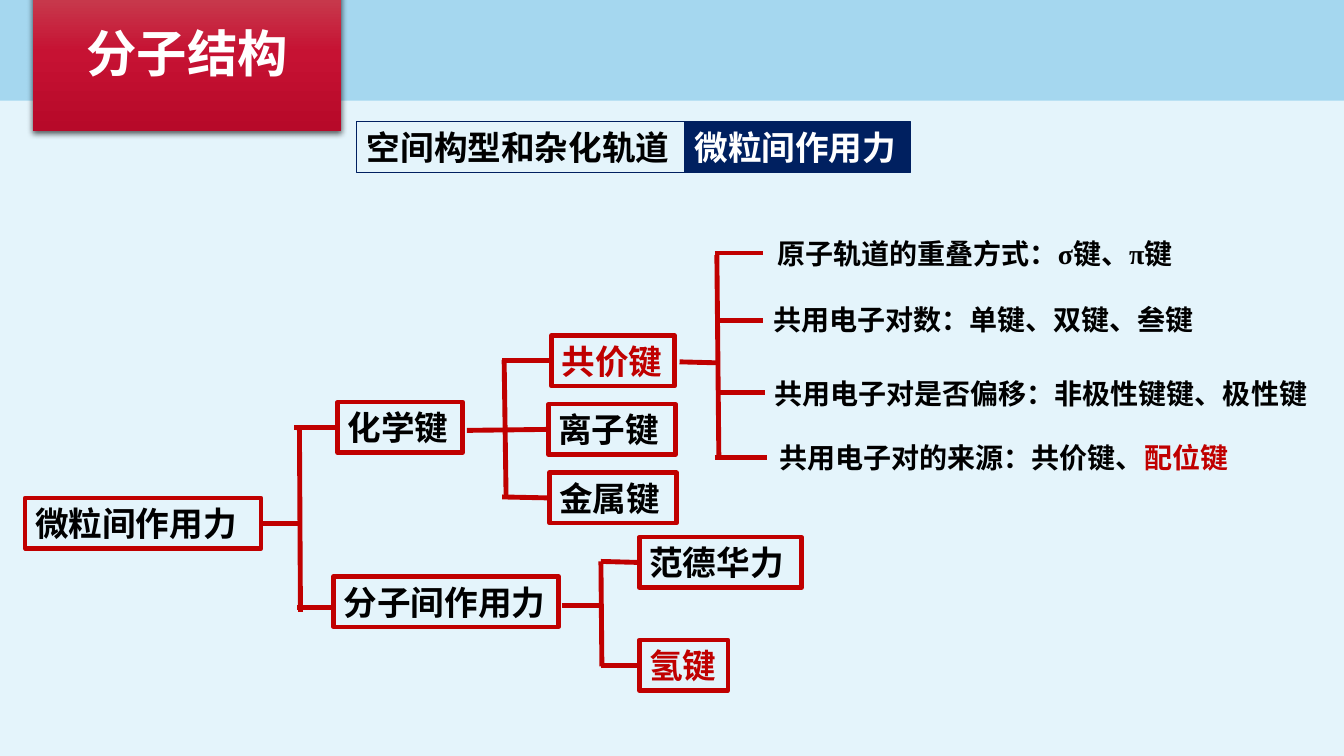
from dataclasses import dataclass

from lxml import etree
from pptx import Presentation
from pptx.dml.color import RGBColor
from pptx.enum import shapes, text
from pptx.util import Inches, Pt

DRAWING = "http://schemas.openxmlformats.org/drawingml/2006/main"
LEFT, RIGHT = 1, 3


@dataclass(frozen=True)
class Theme:
    background: str = "E4F4FB"
    band: str = "A5D7EF"
    navy: str = "002060"
    red: str = "C00000"
    black: str = "000000"
    white: str = "FFFFFF"
    title_stops: tuple = ((0, "C84D59"), (50, "C61233"), (100, "B70929"))
    heading_font: str = "Arial"
    note_font: str = "Times New Roman"
    title_size: int = 36
    box_size: int = 24
    note_size: int = 20
    tab_line: float = 0.75
    box_line: float = 3.25
    branch_line: float = 3.5


def color(value):
    return RGBColor.from_string(value)


def add_xml(parent, source):
    parent.append(etree.fromstring(source.replace(">", f' xmlns:a="{DRAWING}">', 1)))


class StructureSlide:
    def __init__(self, page, theme):
        self.page, self.theme = page, theme
        page.background.fill.solid()
        page.background.fill.fore_color.rgb = color(theme.background)

    def place(self, shape, left, top, width, height):
        shape.left, shape.top = Inches(left), Inches(top)
        shape.width, shape.height = Inches(width), Inches(height)

    def set_text(self, shape, pieces, font, size, align=text.PP_ALIGN.LEFT,
                 anchor=text.MSO_ANCHOR.TOP):
        """Fill a shape with one paragraph of (words, colour) pieces."""
        frame = shape.text_frame
        frame.word_wrap = True
        frame.auto_size = text.MSO_AUTO_SIZE.SHAPE_TO_FIT_TEXT
        frame.vertical_anchor = anchor
        para = frame.paragraphs[0]
        para.alignment = align
        for words, ink in pieces:
            span = para.add_run()
            span.text = words
            span.font.name, span.font.size, span.font.bold = font, Pt(size), True
            span.font.color.rgb = color(ink)

    def band(self, width, height):
        """Put the header strip behind the title."""
        strip = self.rectangle(0, 0, width, height, fill=self.theme.band)
        self.page.shapes.title._element.addprevious(strip._element)

    def title(self, words, left, top, width, height):
        theme, title = self.theme, self.page.shapes.title
        self.place(title, left, top, width, height)
        stops = "".join(f'<a:gs pos="{stop * 1000}"><a:srgbClr val="{value}"/></a:gs>'
                        for stop, value in theme.title_stops)
        properties = title._element.spPr
        add_xml(properties, '<a:prstGeom prst="rect"><a:avLst/></a:prstGeom>')
        add_xml(properties, '<a:gradFill rotWithShape="1">'
                f'<a:gsLst>{stops}</a:gsLst><a:lin ang="5400000" scaled="0"/></a:gradFill>')
        add_xml(properties, '<a:effectLst><a:outerShdw blurRad="57150" dist="19050" '
                'dir="5400000" algn="ctr" rotWithShape="0"><a:srgbClr val="000000">'
                '<a:alpha val="63000"/></a:srgbClr></a:outerShdw></a:effectLst>')
        self.set_text(title, [(words, theme.white)], theme.heading_font, theme.title_size,
                      text.PP_ALIGN.CENTER, text.MSO_ANCHOR.MIDDLE)

    def rectangle(self, left, top, width, height, fill=None, line=None, weight=0):
        box = self.page.shapes.add_shape(
            shapes.MSO_SHAPE.RECTANGLE, Inches(left), Inches(top), Inches(width), Inches(height))
        box.shadow.inherit = False
        if fill:
            box.fill.solid()
            box.fill.fore_color.rgb = color(fill)
        else:
            box.fill.background()
        if line:
            box.line.color.rgb = color(line)
            box.line.width = Pt(weight)
        else:
            box.line.fill.background()
        return box

    def label(self, words, left, top, width, ink, line, weight, fill=None):
        box = self.rectangle(left, top, width, 0.5, fill, line, weight)
        self.set_text(box, [(words, ink)], self.theme.heading_font, self.theme.box_size)
        return box

    def note(self, pieces, left, top, width):
        box = self.page.shapes.add_textbox(
            Inches(left), Inches(top), Inches(width), Inches(0.44))
        self.set_text(box, pieces, self.theme.note_font, self.theme.note_size)

    def branch(self, x1, y1, x2, y2, source=None, target=None):
        """Draw a bracket line, joined to the right of source or the left of target."""
        line = self.page.shapes.add_connector(
            shapes.MSO_CONNECTOR.STRAIGHT, Inches(x1), Inches(y1), Inches(x2), Inches(y2))
        line.line.color.rgb = color(self.theme.red)
        line.line.width = Pt(self.theme.branch_line)
        add_xml(line._element.spPr, "<a:effectLst></a:effectLst>")
        if source:
            line.begin_connect(source, RIGHT)
        if target:
            line.end_connect(target, LEFT)


def main():
    theme = Theme()
    deck = Presentation()
    deck.slide_width, deck.slide_height = Inches(13.33), Inches(7.5)
    slide = StructureSlide(deck.slides.add_slide(deck.slide_layouts[5]), theme)
    slide.band(13.33, 1)
    slide.title("分子结构", 0.33, 0.16, 3.05, 0.71)

    slide.label("空间构型和杂化轨道", 3.54, 1.21, 3.25, theme.black, theme.navy, theme.tab_line)
    slide.label("微粒间作用力", 6.79, 1.21, 2.24, theme.white, theme.navy, theme.tab_line,
                theme.navy)

    boxes = {}
    for words, left, top, width, ink in (
            ("微粒间作用力", 0.25, 4.94, 2.34, theme.black),
            ("化学键", 3.35, 3.99, 1.24, theme.black),
            ("分子间作用力", 3.31, 5.72, 2.23, theme.black),
            ("离子键", 5.44, 4.01, 1.26, theme.black),
            ("共价键", 5.47, 3.33, 1.22, theme.red),
            ("金属键", 5.45, 4.69, 1.26, theme.black),
            ("范德华力", 6.34, 5.33, 1.61, theme.black),
            ("氢键", 6.34, 6.35, 0.88, theme.red)):
        boxes[words] = slide.label(words, left, top, width, ink, theme.red, theme.box_line)

    for spine in ((2.97, 4.24, 2.98, 6.07), (5.96, 5.57, 5.97, 6.61),
                  (5, 3.57, 5.02, 4.95), (7.11, 2.53, 7.13, 4.56)):
        slide.branch(*spine)
    slide.branch(2.59, 5.19, 2.98, 5.19, source=boxes["微粒间作用力"])
    for x, y, end_x, end_y, target in (
            (2.92, 4.24, 3.35, 4.24, "化学键"),
            (5.96, 5.57, 6.34, 5.58, "范德华力"),
            (5.96, 6.6, 6.34, 6.6, "氢键"),
            (4.63, 4.27, 5.44, 4.26, "离子键"),
            (4.98, 3.58, 5.47, 3.58, "共价键"),
            (4.98, 4.93, 5.45, 4.94, "金属键")):
        slide.branch(x, y, end_x, end_y, target=boxes[target])
    for loose in ((2.95, 6.03, 3.33, 6.03), (5.57, 6.01, 5.96, 6.01), (6.74, 3.59, 7.13, 3.6),
                  (7.09, 2.51, 7.57, 2.51), (7.11, 3.18, 7.57, 3.18),
                  (7.12, 3.89, 7.59, 3.89), (7.09, 4.54, 7.61, 4.54)):
        slide.branch(*loose)

    for left, top, width, words, accent in (
            (7.61, 2.3, 4.75, "原子轨道的重叠方式：σ键、π键", ""),
            (7.57, 2.95, 4.75, "共用电子对数：单键、双键、叁键", ""),
            (7.58, 3.69, 5.8, "共用电子对是否偏移：非极性键键、极性键", ""),
            (7.63, 4.32, 4.75, "共用电子对的来源：共价键、", "配位键")):
        pieces = [(words, theme.black)]
        if accent:
            pieces.append((accent, theme.red))
        slide.note(pieces, left, top, width)

    deck.save("out.pptx")


if __name__ == "__main__":
    main()
